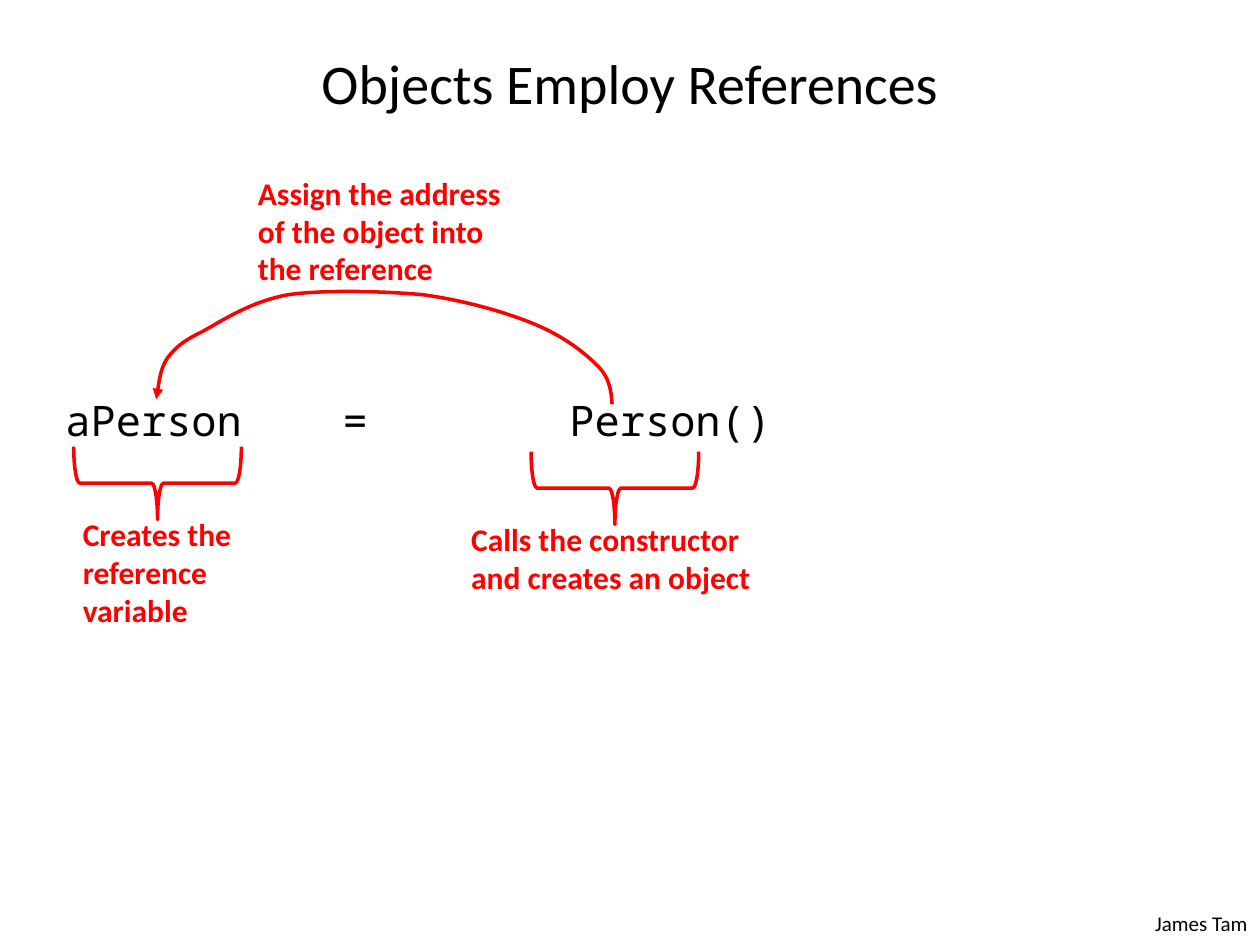
from lxml import etree
from pptx import Presentation
from pptx import util as u
from pptx.dml import color
from pptx.enum import shapes, text
from pptx.oxml import ns

RED, BLACK = "FF0000", "000000"


def rgb(value):
    return color.RGBColor.from_string(value)


def write(shape, wording, hue, alignment, **font_format):
    frame = shape.text_frame
    frame.word_wrap = True
    paragraph = frame.paragraphs[0]
    paragraph.alignment = alignment
    run = paragraph.add_run()
    run.text = wording
    for name, value in font_format.items():
        setattr(run.font, name, value)
    run.font.color.rgb = rgb(hue)
    return paragraph


presentation = Presentation()
presentation.slide_width, presentation.slide_height = u.Cm(25.4), u.Cm(19.05)
slide = presentation.slides.add_slide(presentation.slide_layouts[5])

title = slide.shapes.title
title_format = {"left": u.Cm(1.27), "top": u.Cm(0.76), "width": u.Cm(22.86), "height": u.Cm(1.78)}
for name, value in title_format.items():
    setattr(title, name, value)
title.text_frame.vertical_anchor = text.MSO_ANCHOR.MIDDLE
write(title, "Objects Employ References", BLACK, text.PP_ALIGN.CENTER, name="Calibri", size=u.Pt(32))

footer = slide.shapes.add_textbox(u.Cm(22.02), u.Cm(18.24), u.Cm(3.38), u.Cm(0.76))
write(footer, "James Tam", BLACK, text.PP_ALIGN.RIGHT, name="Calibri", size=u.Pt(12))

statement = slide.shapes.add_textbox(u.Cm(1.07), u.Cm(7.82), u.Cm(22.86), u.Cm(1.27))
paragraph = write(statement, "aPerson\t=\tPerson()", BLACK, text.PP_ALIGN.LEFT,
                  name="Noto Sans Mono", size=u.Pt(24))
paragraph.space_before = u.Pt(4.8)
tab_stops = etree.SubElement(paragraph._p.get_or_add_pPr(), ns.qn("a:tabLst"))
for position in (5.59, 10.16):
    etree.SubElement(tab_stops, ns.qn("a:tab"), pos=str(u.Cm(position)), algn="l")

label_format = {"name": "Calibri", "size": u.Pt(18), "bold": True}
outlines = []

callouts = [
    ("Calls the constructor and creates an object", (9.25, 10.36, 6.35, 2.34), (11.66, 8.15)),
    ("Creates the reference variable", (1.42, 10.26, 4.88, 2.34), (2.44, 8.05)),
]
for wording, label_box, brace_corner in callouts:
    group = slide.shapes.add_group_shape()
    label = group.shapes.add_textbox(*map(u.Cm, label_box))
    write(label, wording, RED, text.PP_ALIGN.LEFT, **label_format)
    brace = group.shapes.add_shape(shapes.MSO_SHAPE.RIGHT_BRACE,
                                   *map(u.Cm, (*brace_corner, 1.47, 3.38)))
    brace.rotation = 90
    outlines.append(brace)

curve_points = [
    (12.34, 8.15),
    (12.32, 7.87), (12.29, 7.59), (12.01, 7.34),
    (11.73, 7.06), (11.28, 6.73), (10.69, 6.5),
    (10.11, 6.27), (9.32, 6.05), (8.51, 5.94),
    (7.7, 5.87), (6.55, 5.84), (5.82, 5.94),
    (5.08, 6.07), (4.5, 6.45), (4.09, 6.68),
    (3.68, 6.88), (3.56, 6.99), (3.38, 7.21),
    (3.23, 7.44), (3.15, 8.05), (3.15, 8.05),
]
start, *controls = [(u.Cm(x), u.Cm(y)) for x, y in curve_points]
group = slide.shapes.add_group_shape()
builder = group.shapes.build_freeform(*start)
builder.add_line_segments(controls, close=False)
assignment_arrow = builder.convert_to_shape()
segments = list(assignment_arrow._element.iter(ns.qn("a:lnTo")))
for first in range(0, len(segments), 3):
    triple = segments[first:first + 3]
    bezier = etree.Element(ns.qn("a:cubicBezTo"))
    triple[0].addprevious(bezier)
    for segment in triple:
        bezier.append(segment[0])
        segment.getparent().remove(segment)
outlines.append(assignment_arrow)

label = group.shapes.add_textbox(u.Cm(4.95), u.Cm(3.38), u.Cm(6.05), u.Cm(2.92))
write(label, "Assign the address of the object into the reference", RED, text.PP_ALIGN.LEFT, **label_format)

for shape in outlines:
    shape.shadow.inherit = False
    shape.fill.background()
    shape.line.color.rgb = rgb(RED)
    shape.line.width = u.Pt(2)
etree.SubElement(assignment_arrow.line._get_or_add_ln(), ns.qn("a:tailEnd"), type="triangle")

presentation.save("out.pptx")
